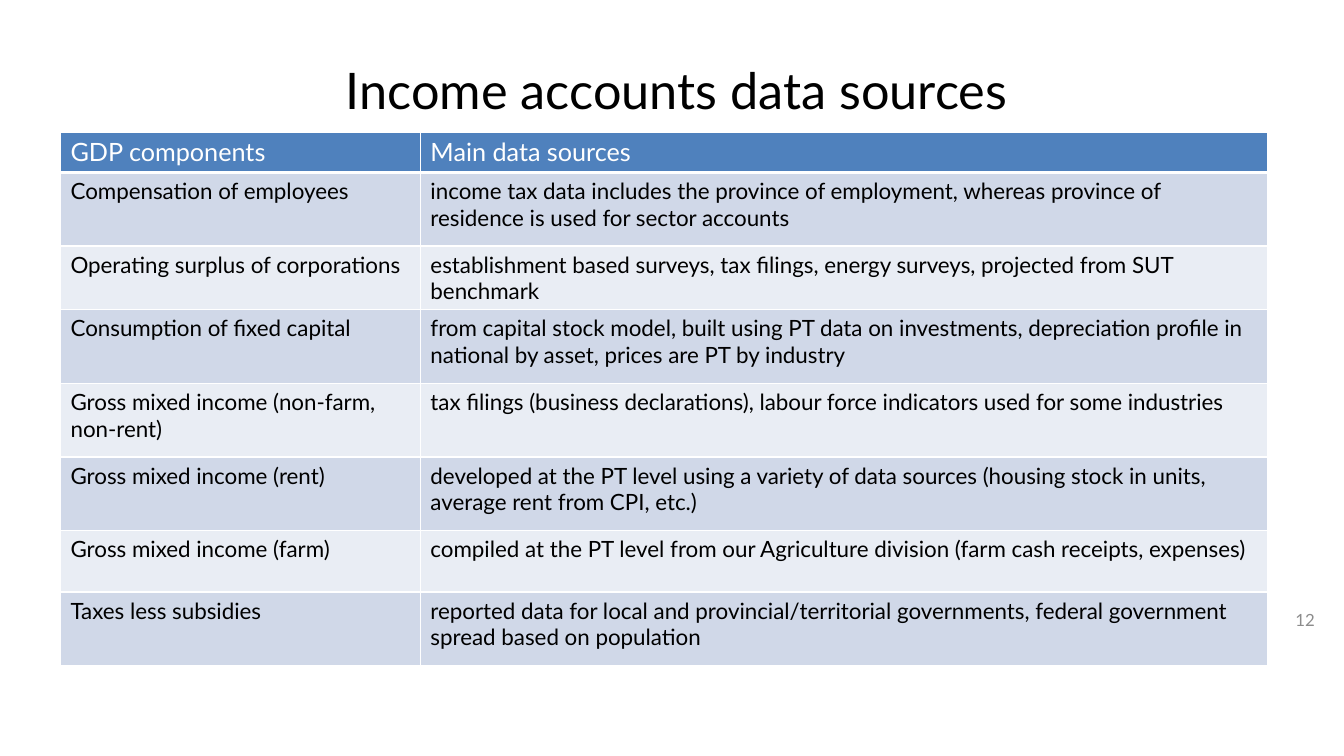
from lxml.etree import SubElement
from pptx import Presentation
from pptx.dml.color import RGBColor
from pptx.enum.text import MSO_ANCHOR, PP_ALIGN
from pptx.oxml.ns import qn
from pptx.util import Emu, Pt

PX = 9144
FONT = "Lato"
COLORS = {
    "text": "000000",
    "white": "FFFFFF",
    "number": "8C8C8C",
    "header": "4F81BD",
    "dark_band": "D0D8E8",
    "light_band": "E9EDF4",
}
COLUMN_WIDTHS = [357, 840]
ROW_HEIGHTS = [39, 73, 61, 73, 73, 73, 61, 73]
ROWS = [
    ("GDP components", "Main data sources"),
    ("Compensation of employees",
     "income tax data includes the province of employment, whereas province of residence is used for sector accounts"),
    ("Operating surplus of corporations",
     "establishment based surveys, tax filings, energy surveys, projected from SUT benchmark"),
    ("Consumption of fixed capital",
     "from capital stock model, built using PT data on investments, depreciation profile in national by asset, prices are PT by industry"),
    ("Gross mixed income (non-farm, non-rent)",
     "tax filings (business declarations), labour force indicators used for some industries"),
    ("Gross mixed income (rent)",
     "developed at the PT level using a variety of data sources (housing stock in units, average rent from CPI, etc.)"),
    ("Gross mixed income (farm)",
     "compiled at the PT level from our Agriculture division (farm cash receipts, expenses)"),
    ("Taxes less subsidies",
     "reported data for local and provincial/territorial governments, federal government spread based on population"),
]


def px(length):
    return Emu(length * PX)


def color(name):
    return RGBColor.from_string(COLORS[name])


def write(frame, text, size, color_name, align=PP_ALIGN.LEFT):
    frame.text = text
    frame.word_wrap = True
    para = frame.paragraphs[0]
    para.alignment = align
    for span in para.runs:
        span.font.name = FONT
        span.font.size = Pt(size)
        span.font.bold = False
        span.font.color.rgb = color(color_name)


def add_title(page, text):
    title = page.shapes.title
    title.left, title.top, title.width, title.height = map(px, (45, 30, 1252, 117))
    write(title.text_frame, text, 36, "text", PP_ALIGN.CENTER)
    title.text_frame.vertical_anchor = MSO_ANCHOR.MIDDLE


def add_page_number(page, number):
    box = page.shapes.add_textbox(*map(px, (1242, 595, 72, 40)))
    write(box.text_frame, number, 12, "number", PP_ALIGN.RIGHT)
    box.text_frame.vertical_anchor = MSO_ANCHOR.MIDDLE


def set_borders(cell, bottom_width):
    properties = cell._tc.get_or_add_tcPr()
    for side, width in (("lnL", 1), ("lnR", 1), ("lnT", 1), ("lnB", bottom_width)):
        line = SubElement(properties, qn("a:" + side), w=str(Pt(width)))
        fill = SubElement(line, qn("a:solidFill"))
        SubElement(fill, qn("a:srgbClr"), val=COLORS["white"])


def fill_cell(cell, text, row):
    is_header = row == 0
    write(cell.text_frame, text, 18 if is_header else 16, "white" if is_header else "text")
    set_borders(cell, 3 if is_header else 1)
    band = "dark_band" if row % 2 else "light_band"
    cell.fill.solid()
    cell.fill.fore_color.rgb = color("header" if is_header else band)


def add_sources_table(page):
    frame = page.shapes.add_table(
        len(ROWS), len(COLUMN_WIDTHS), px(60), px(131),
        px(sum(COLUMN_WIDTHS)), px(sum(ROW_HEIGHTS)))
    table = frame.table
    for column, width in zip(table.columns, COLUMN_WIDTHS):
        column.width = px(width)
    for row, (height, texts) in enumerate(zip(ROW_HEIGHTS, ROWS)):
        table.rows[row].height = px(height)
        for column, text in enumerate(texts):
            fill_cell(table.cell(row, column), text, row)


def main():
    deck = Presentation()
    deck.slide_width, deck.slide_height = px(1333), px(750)
    page = deck.slides.add_slide(deck.slide_layouts[5])
    add_title(page, "Income accounts data sources")
    add_page_number(page, "12")
    add_sources_table(page)
    deck.save("out.pptx")


if __name__ == "__main__":
    main()
